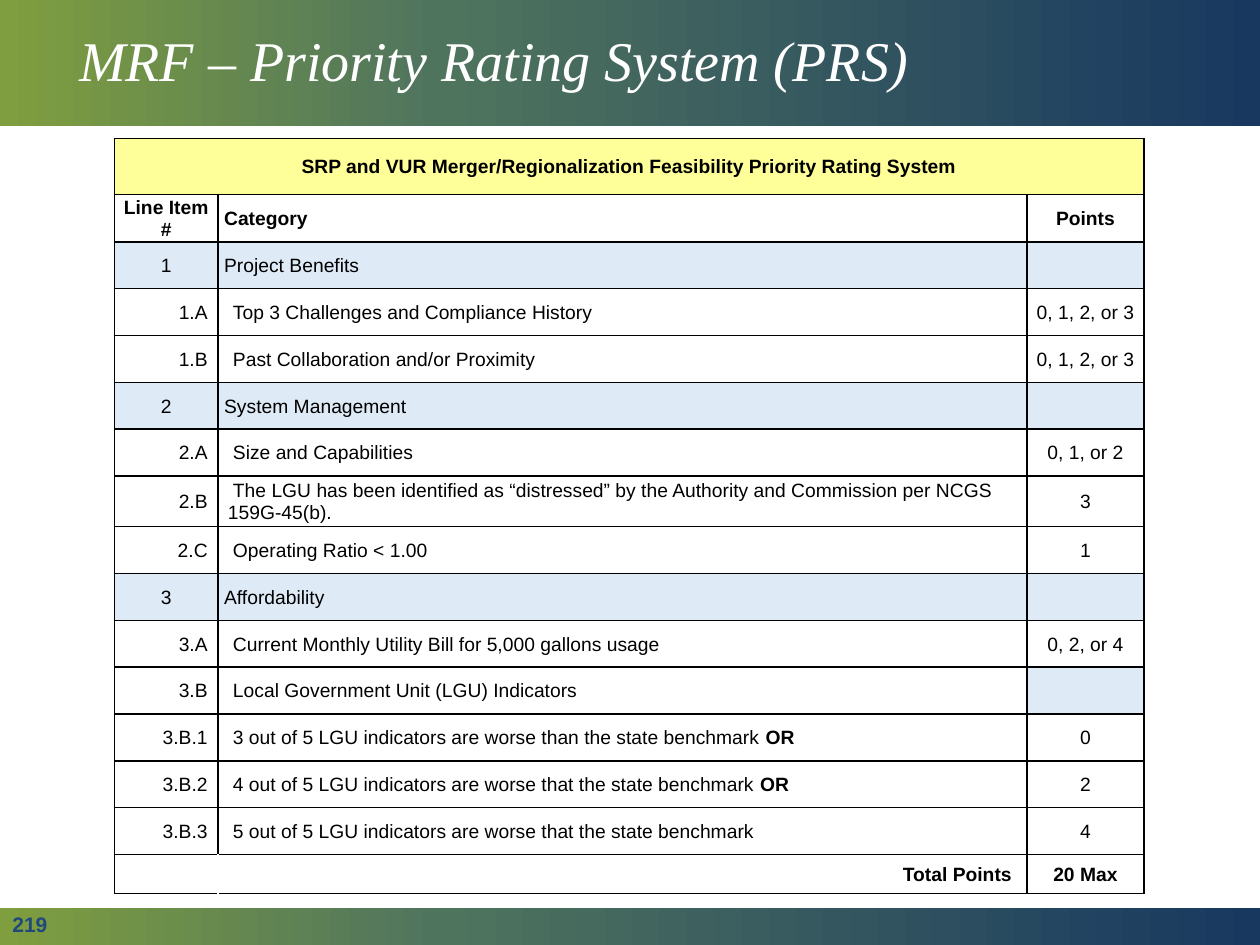
from lxml.etree import SubElement as Sub
from pptx import Presentation
from pptx.dml.color import RGBColor
from pptx.enum.shapes import MSO_SHAPE as Shape
from pptx.enum.text import MSO_ANCHOR as Anchor, PP_ALIGN as Align
from pptx.oxml.ns import qn
from pptx.util import Emu, Inches, Pt

WHITE = RGBColor(0xFF, 0xFF, 0xFF)
BLACK = RGBColor(0, 0, 0)
NAVY = RGBColor(0x1F, 0x49, 0x7D)
YELLOW = RGBColor(0xFF, 0xFF, 0x99)
PALE = RGBColor(0xDE, 0xEA, 0xF6)
FADE = [
    (0, RGBColor(0x7F, 0x9E, 0x3F)),
    (35, RGBColor(0x4F, 0x74, 0x5E)),
    (100, RGBColor(0x18, 0x38, 0x60)),
]

WIDE, HIGH = Inches(10), Inches(7.5)
COLS, ROWS = 100, 75
WIDTHS = [0.82, 6.43, 0.93]
HEIGHTS = [0.44, 0.36] + [0.37] * 5 + [0.4] + [0.37] * 7 + [0.31]
THIN, PAD, SPACE = Inches(0.01), Inches(0.08), Inches(0.04)

HEAD, NAMES, GROUP, ITEM, SUM = range(5)
DATA = [
    (HEAD, "SRP and VUR Merger/Regionalization Feasibility Priority Rating System", "", ""),
    (NAMES, "Line Item #", "Category", "Points"),
    (GROUP, "1", "Project Benefits", ""),
    (ITEM, "1.A", "Top 3 Challenges and Compliance History", "0, 1, 2, or 3"),
    (ITEM, "1.B", "Past Collaboration and/or Proximity", "0, 1, 2, or 3"),
    (GROUP, "2", "System Management", ""),
    (ITEM, "2.A", "Size and Capabilities", "0, 1, or 2"),
    (ITEM, "2.B", "The LGU has been identified as “distressed” by the Authority "
                  "and Commission per NCGS 159G-45(b).", "3"),
    (ITEM, "2.C", "Operating Ratio < 1.00", "1"),
    (GROUP, "3", "Affordability", ""),
    (ITEM, "3.A", "Current Monthly Utility Bill for 5,000 gallons usage", "0, 2, or 4"),
    (ITEM, "3.B", "Local Government Unit (LGU) Indicators", ""),
    (ITEM, "3.B.1", "3 out of 5 LGU indicators are worse than the state benchmark OR", "0"),
    (ITEM, "3.B.2", "4 out of 5 LGU indicators are worse that the state benchmark OR", "2"),
    (ITEM, "3.B.3", "5 out of 5 LGU indicators are worse that the state benchmark", "4"),
    (SUM, "", "Total Points", "20 Max"),
]


def grid(x, y, w, h):
    return (Emu(int(x * WIDE / COLS)), Emu(int(y * HIGH / ROWS)),
            Emu(int(w * WIDE / COLS)), Emu(int(h * HIGH / ROWS)))


def style(run, name, size, color, bold=False, slant=False):
    font = run.font
    font.name, font.size = name, Pt(size)
    font.bold, font.italic = bold, slant
    font.color.rgb = color


def add_band(slide, box):
    band = slide.shapes.add_shape(Shape.RECTANGLE, *box)
    band.shadow.inherit = False
    band.line.fill.background()
    band.fill.gradient()
    band.fill.gradient_angle = 0
    stops = band.fill._fill._gradFill.find(qn("a:gsLst"))
    for stop in list(stops):
        stops.remove(stop)
    for share, color in FADE:
        stop = Sub(stops, qn("a:gs"), pos=str(share * 1000))
        Sub(stop, qn("a:srgbClr"), val=str(color))


def add_text(slide, box, text, *look):
    frame = slide.shapes.add_textbox(*box).text_frame
    frame.word_wrap = True
    frame.vertical_anchor = Anchor.MIDDLE
    frame.margin_top = frame.margin_bottom = 0
    para = frame.paragraphs[0]
    para.text = text
    para.line_spacing = 0.9
    style(para.runs[0], *look)


def set_edges(cell, sides):
    props = cell._tc.get_or_add_tcPr()
    for spot, side in enumerate(sides):
        line = props.makeelement(qn("a:ln" + side), {"w": str(Pt(1))})
        Sub(Sub(line, qn("a:solidFill")), qn("a:srgbClr"), val=str(BLACK))
        props.insert(spot, line)


def set_fill(cell, kind, col, text):
    if kind == HEAD:
        color = YELLOW
    elif kind == GROUP or (col == 2 and not text):
        color = PALE
    else:
        color = WHITE
    cell.fill.solid()
    cell.fill.fore_color.rgb = color


def set_text(cell, kind, col, text):
    cell.vertical_anchor = Anchor.MIDDLE
    cell.margin_left = cell.margin_right = cell.margin_top = THIN
    cell.margin_bottom = 0
    para = cell.text_frame.paragraphs[0]
    para.alignment = Align.CENTER
    if col == 0 and kind == ITEM:
        para.alignment = Align.RIGHT
        cell.margin_right = PAD
    elif col == 1 and kind == SUM:
        para.alignment = Align.RIGHT
        cell.margin_right = PAD + SPACE
    elif col == 1:
        para.alignment = Align.LEFT
        cell.margin_left = PAD if kind == ITEM else THIN
        para._p.get_or_add_pPr().set("indent", str(SPACE))
    if not text:
        Sub(para._p, qn("a:endParaRPr"), sz="1100")
        return
    bold = kind in (HEAD, NAMES, SUM)
    stem = text.removesuffix("OR")
    para.text = stem
    style(para.runs[0], "Arial", 11, BLACK, bold)
    if stem != text:
        run = para.add_run()
        run.text = "OR"
        style(run, "Arial", 11, BLACK, True)


def add_scores(slide, box):
    wide, high = box[2:]
    table = slide.shapes.add_table(len(DATA), len(WIDTHS), *box).table
    table.first_row = table.horz_banding = False
    for col, share in zip(table.columns, WIDTHS):
        col.width = Emu(int(wide * share / sum(WIDTHS)))
    for row, share in zip(table.rows, HEIGHTS):
        row.height = Emu(int(high * share / sum(HEIGHTS)))
    for r, (kind, *texts) in enumerate(DATA):
        for c, text in enumerate(texts):
            cell = table.cell(r, c)
            set_text(cell, kind, c, text)
            set_fill(cell, kind, c, text)
            sides = ["L", "R", "T", "B"]
            if kind == SUM and c < 2:
                sides.remove("R" if c == 0 else "L")
            set_edges(cell, sides)
    table.cell(0, 0).merge(table.cell(0, 2))


def main():
    deck = Presentation()
    deck.slide_width, deck.slide_height = WIDE, HIGH
    slide = deck.slides.add_slide(deck.slide_layouts[6])
    add_band(slide, grid(0, 72.1, COLS, 3))
    add_band(slide, grid(0, 0, COLS, 10))
    add_text(slide, grid(5.3, 0, 91, 10), "MRF – Priority Rating System (PRS)",
             "Times New Roman", 32, WHITE, False, True)
    add_text(slide, grid(0, 72.7, 22.5, 1.5), "219", "Arial", 12, NAVY, True)
    add_scores(slide, grid(9.1, 11, 81.7, 59.8))
    deck.save("out.pptx")


if __name__ == "__main__":
    main()
